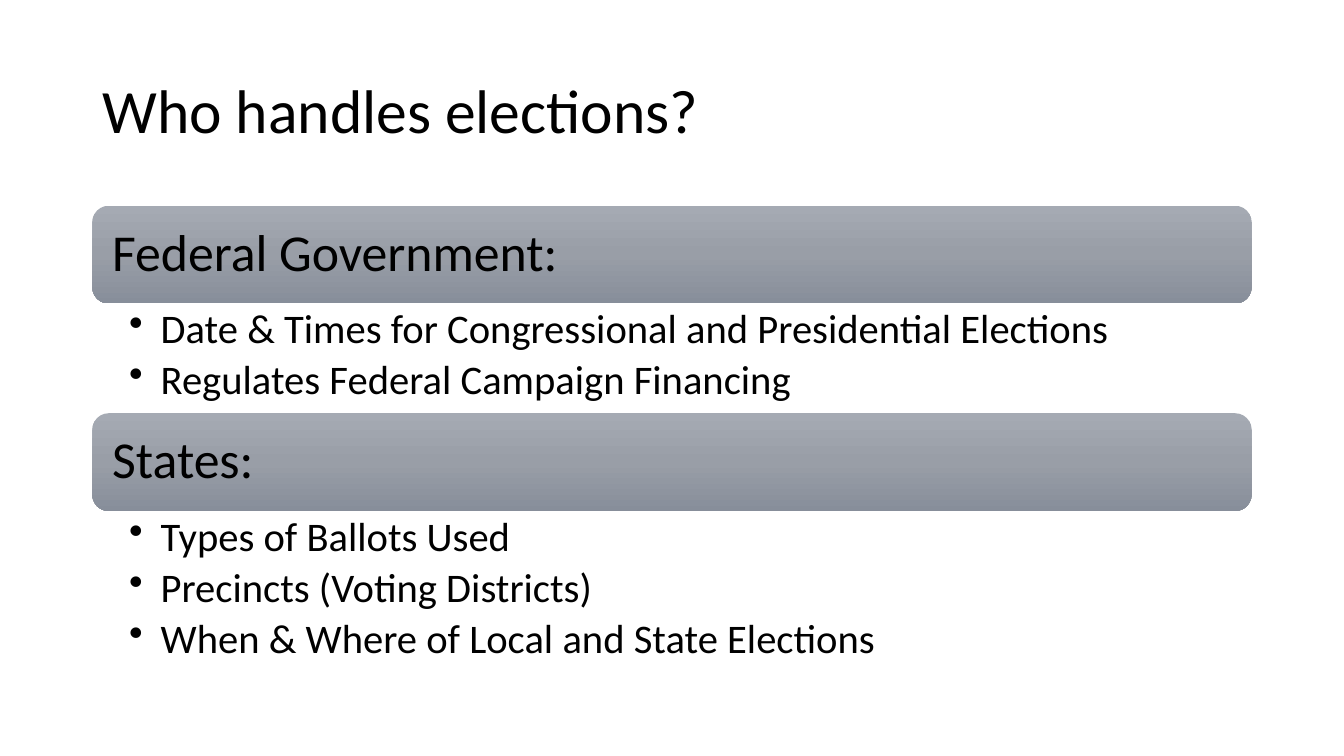
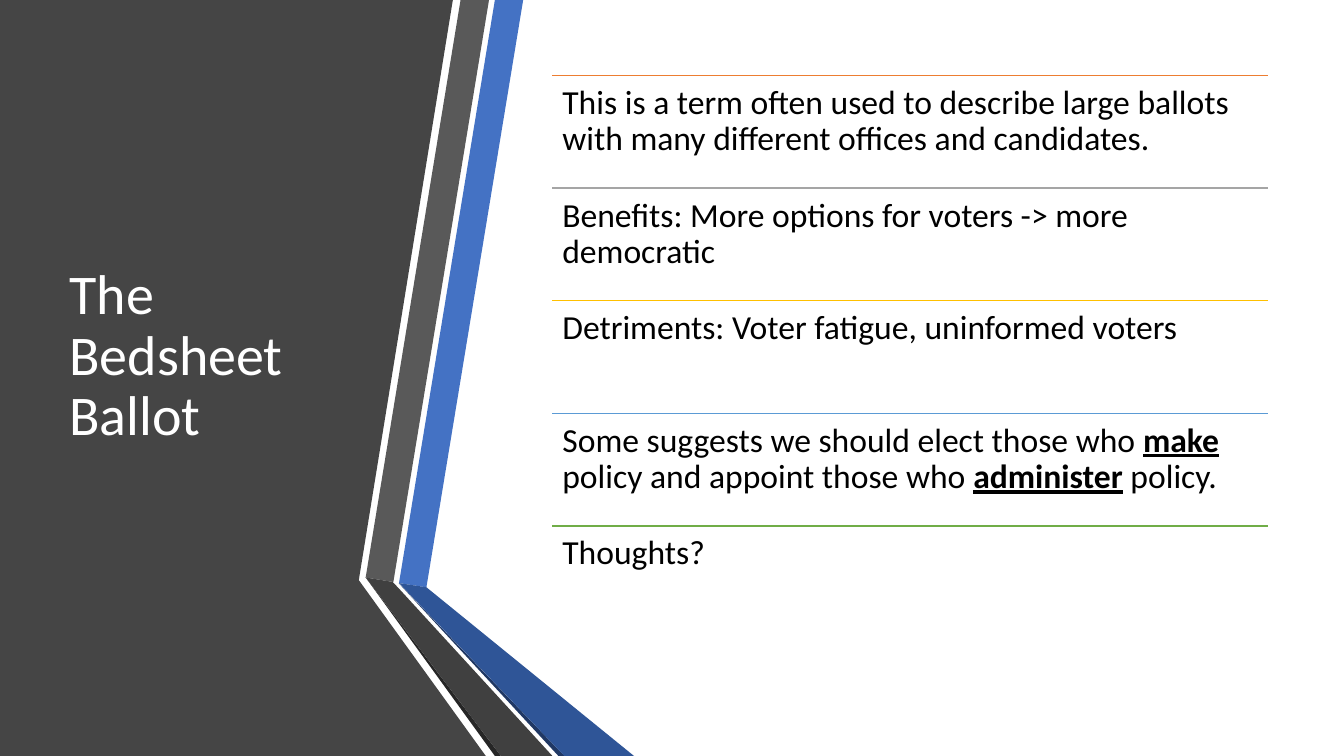
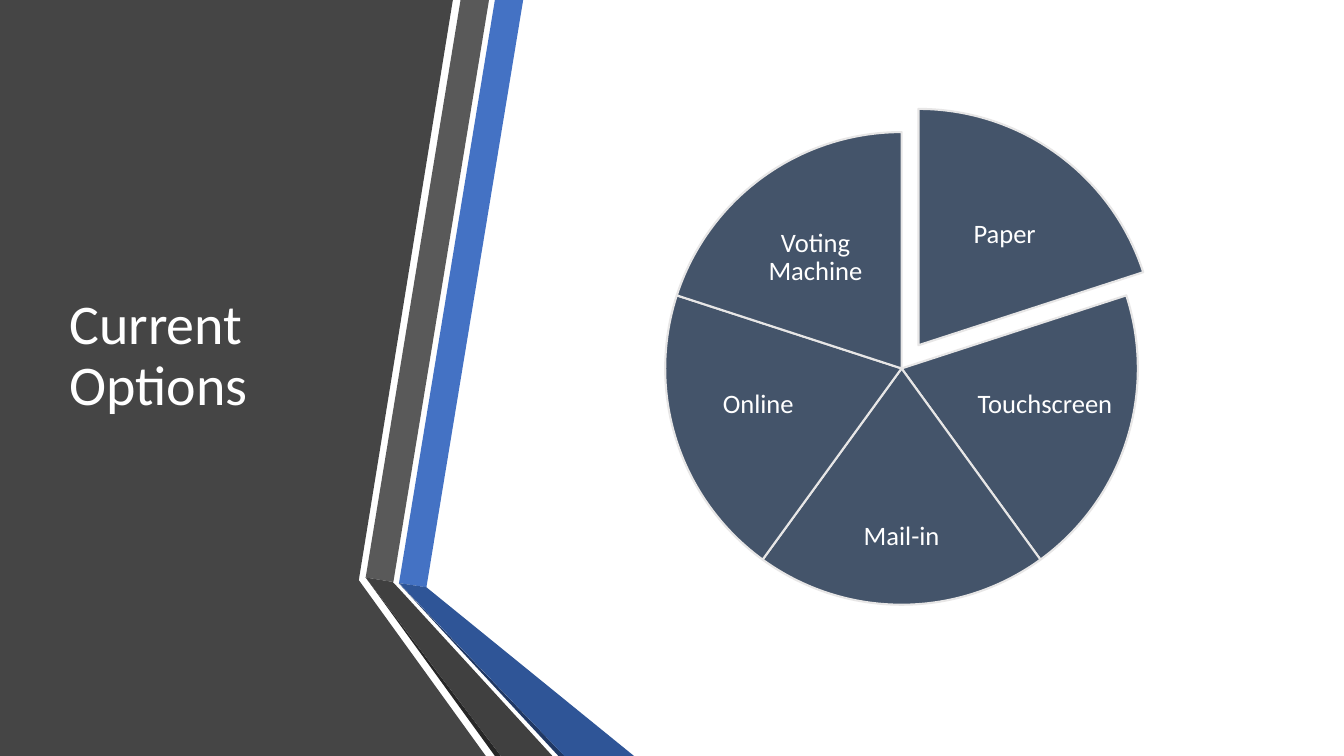
"""Build three slides on who runs elections and how ballots are cast."""
from lxml import etree
from pptx import Presentation
from pptx.dml.color import RGBColor
from pptx.enum.shapes import MSO_CONNECTOR, MSO_SHAPE
from pptx.enum.text import MSO_ANCHOR, MSO_AUTO_SIZE, PP_ALIGN
from pptx.oxml import parse_xml
from pptx.oxml.ns import nsdecls, qn
from pptx.util import Pt

LEFT, CENTER = PP_ALIGN.LEFT, PP_ALIGN.CENTER
TOP, MIDDLE = MSO_ANCHOR.TOP, MSO_ANCHOR.MIDDLE
NO_AUTOFIT = MSO_AUTO_SIZE.NONE
STRAIGHT = MSO_CONNECTOR.STRAIGHT
ROUNDED, PIE = MSO_SHAPE.ROUNDED_RECTANGLE, MSO_SHAPE.PIE
TITLE_ONLY = 5
FONT = "Calibri"

COLORS = {
    "black": "000000", "white": "FFFFFF", "panel": "454545",
    "blue": "4472C4", "blue_dark": "2F5597", "blue_edge": "203864",
    "gray": "595959", "gray_dark": "404040", "gray_edge": "262626",
    "orange": "ED7D31", "silver": "A5A5A5", "gold": "FFC000",
    "sky": "5B9BD5", "green": "70AD47",
    "wedge": "44546A", "wedge_line": "E7E6E6",
    "band_top": "A5AAB3", "band_middle": "999EA7", "band_bottom": "878E9A",
}

HANDLERS_TITLE = "Who handles elections?"
HANDLERS = [
    ("Federal Government:", [
        "Date & Times for Congressional and Presidential Elections",
        "Regulates Federal Campaign Financing"]),
    ("States:", [
        "Types of Ballots Used",
        "Precincts (Voting Districts)",
        "When & Where of Local and State Elections"]),
]

BALLOT_TITLE = "The Bedsheet Ballot"
BALLOT_ROWS = [
    ("orange", ["This is a term often used to describe large ballots "
                "with many different offices and candidates."]),
    ("silver", ["Benefits: More options for voters -> more democratic"]),
    ("gold", ["Detriments: Voter fatigue, uninformed voters"]),
    ("sky", ["Some suggests we should elect those who ", "make",
             " policy and appoint those who ", "administer", " policy."]),
    ("green", ["Thoughts?"]),
]

OPTIONS_TITLE = "Current Options"
OPTIONS = [
    {"name": "Paper", "offset": (61.5, -79), "width": 114, "explode": (12.1, -16.6)},
    {"name": "Touchscreen", "offset": (102.4, 26.3), "width": 101},
    {"name": "Mail-in", "offset": (0, 120.5), "width": 121},
    {"name": "Online", "offset": (-102.4, 26.3), "width": 101},
    {"name": "Voting Machine", "offset": (-61.5, -79), "width": 114},
]

RIBBONS = [
    ("panel", [(0, 0), (323.5, 0), (256.3, 414.4), (347, 540), (0, 540)]),
    ("blue", [(285, 416.5), (304.6, 419.5), (373.7, 0), (353.5, 0)]),
    ("gray", [(349.3, 0), (329, 0), (261.2, 412.5), (281, 415.7)]),
    ("gray_edge", [(261.2, 412.5), (353.5, 540), (357.8, 540)]),
    ("blue_edge", [(285, 416.8), (398.9, 540), (403.2, 540)]),
    ("blue_dark", [(285, 416.5), (403.2, 540), (452.9, 540), (304.6, 419.5)]),
    ("gray_dark", [(394.6, 540), (284.4, 419.8), (280.4, 415.7),
                   (261.2, 412.5), (357.8, 540)]),
]


def rgb(name):
    """Return the named colour."""
    return RGBColor.from_string(COLORS[name])


def apply(target, values):
    """Set each attribute of the target from a dict."""
    for name, value in values.items():
        setattr(target, name, value)


def place(left, top, width, height):
    """Return a box given in points as lengths."""
    return [Pt(value) for value in (left, top, width, height)]


def paint(shape, fill, line=None):
    """Give a shape a flat fill and, if named, an outline."""
    shape.shadow.inherit = False
    shape.fill.solid()
    shape.fill.fore_color.rgb = rgb(fill)
    if line:
        shape.line.color.rgb = rgb(line)
        shape.line.width = Pt(1.5)
    else:
        shape.line.fill.background()


def write(shape, paragraphs, size, color="black", align=LEFT, anchor=TOP,
          margins=(7.2, 3.6, 7.2, 3.6), space_after=0):
    """Write paragraphs of runs, where every second run is emphasised."""
    frame = shape.text_frame
    left, top, right, bottom = map(Pt, margins)
    apply(frame, {"word_wrap": True, "auto_size": NO_AUTOFIT, "vertical_anchor": anchor,
                  "margin_left": left, "margin_top": top,
                  "margin_right": right, "margin_bottom": bottom})
    for index, runs in enumerate(paragraphs):
        paragraph = frame.add_paragraph() if index else frame.paragraphs[0]
        apply(paragraph, {"alignment": align, "line_spacing": 0.9,
                          "space_before": Pt(0), "space_after": Pt(space_after)})
        for position, text in enumerate(runs):
            run = paragraph.add_run()
            run.text = text
            emphasised = position % 2 == 1
            apply(run.font, {"name": FONT, "size": Pt(size),
                             "bold": emphasised, "underline": emphasised})
            run.font.color.rgb = rgb(color)


def add_bullets(shape, indent):
    """Put a hanging round bullet on each paragraph."""
    for paragraph in shape.text_frame.paragraphs:
        properties = paragraph._p.get_or_add_pPr()
        properties.set("marL", str(Pt(indent)))
        properties.set("indent", str(-Pt(indent)))
        etree.SubElement(properties, qn("a:buChar")).set("char", "•")


def add_slide(presentation, title, box, size, color="black"):
    """Add a title-only slide with its title placed and formatted."""
    slide = presentation.slides.add_slide(presentation.slide_layouts[TITLE_ONLY])
    shape = slide.shapes.title
    apply(shape, dict(zip(("left", "top", "width", "height"), place(*box))))
    write(shape, [[title]], size, color, anchor=MIDDLE)
    return slide


def add_ribbon_slide(presentation, title):
    """Add a slide with the dark side panel, ribbons and white title."""
    slide = add_slide(presentation, title, (42.5, 54, 219, 402), 40, "white")
    for color, points in RIBBONS:
        corners = [(Pt(x), Pt(y)) for x, y in points]
        builder = slide.shapes.build_freeform(*corners[0])
        builder.add_line_segments(corners[1:], close=True)
        paint(builder.convert_to_shape(), color)
    title_element = slide.shapes.title.element
    title_element.getparent().append(title_element)
    return slide


def add_band(slide, box, heading):
    """Add a rounded heading band with a vertical gradient."""
    band = slide.shapes.add_shape(ROUNDED, *place(*box))
    band.shadow.inherit = False
    band.line.fill.background()
    stops = "".join(
        f'<a:gs pos="{position}"><a:srgbClr val="{COLORS[name]}"/></a:gs>'
        for position, name in ((0, "band_top"), (50000, "band_middle"), (100000, "band_bottom")))
    gradient = parse_xml(f'<a:gradFill {nsdecls("a")} rotWithShape="1"><a:gsLst>{stops}</a:gsLst>'
                         '<a:lin ang="5400000" scaled="0"/></a:gradFill>')
    band.element.spPr.find(qn("a:prstGeom")).addnext(gradient)
    write(band, [[heading]], 37, anchor=MIDDLE, margins=[10.8] * 4)


def build_handlers(presentation):
    """Build the slide of heading bands and bullet lists."""
    slide = add_slide(presentation, HANDLERS_TITLE, (66, 28.75, 828, 104.4), 44)
    left, top, width, band_height, item_height = 66, 147, 828, 69.8, 39.2
    for heading, items in HANDLERS:
        add_band(slide, (left, top, width, band_height), heading)
        top += band_height
        height = item_height * len(items)
        box = slide.shapes.add_textbox(*place(left, top, width, height))
        write(box, [[item] for item in items], 29,
              margins=(26.3, 3.6, 20.9, 3.6), space_after=5.3)
        add_bullets(box, 22.5)
        top += height


def build_ballot(presentation):
    """Build the slide of ruled text rows."""
    slide = add_ribbon_slide(presentation, BALLOT_TITLE)
    left, first_top, width, height = 394.6, 54, 511, 80.4
    for index, (color, runs) in enumerate(BALLOT_ROWS):
        top = first_top + index * height
        rule = slide.shapes.add_connector(STRAIGHT, *place(left, top, left + width, top))
        rule.line.color.rgb = rgb(color)
        rule.line.width = Pt(1)
        etree.SubElement(rule.element.spPr, qn("a:effectLst"))
        box = slide.shapes.add_textbox(*place(left, top, width, height))
        write(box, [runs], 24, margins=[7.2] * 4)


def build_options(presentation):
    """Build the slide of equal wedges with the first pulled out."""
    slide = add_ribbon_slide(presentation, OPTIONS_TITLE)
    center_x, center_y, diameter, label_height = 644, 263.2, 337.6, 80
    full_turn, start = 216, 162
    step = full_turn / len(OPTIONS)
    for index, option in enumerate(OPTIONS):
        shift_x, shift_y = option.get("explode", (0, 0))
        x, y = center_x + shift_x, center_y + shift_y
        wedge = slide.shapes.add_shape(
            PIE, *place(x - diameter / 2, y - diameter / 2, diameter, diameter))
        for side in (0, 1):
            wedge.adjustments[side] = round((start + (index + side) * step) % full_turn, 2)
        paint(wedge, "wedge", "wedge_line")
        offset_x, offset_y = option["offset"]
        label = slide.shapes.add_textbox(*place(
            x + offset_x - option["width"] / 2, y + offset_y - label_height / 2,
            option["width"], label_height))
        write(label, [[option["name"]]], 19, "white", CENTER, MIDDLE, [2] * 4)


def main():
    """Build and save the presentation."""
    presentation = Presentation()
    apply(presentation, {"slide_width": Pt(960), "slide_height": Pt(540)})
    build_handlers(presentation)
    build_ballot(presentation)
    build_options(presentation)
    presentation.save("out.pptx")


if __name__ == "__main__":
    main()
